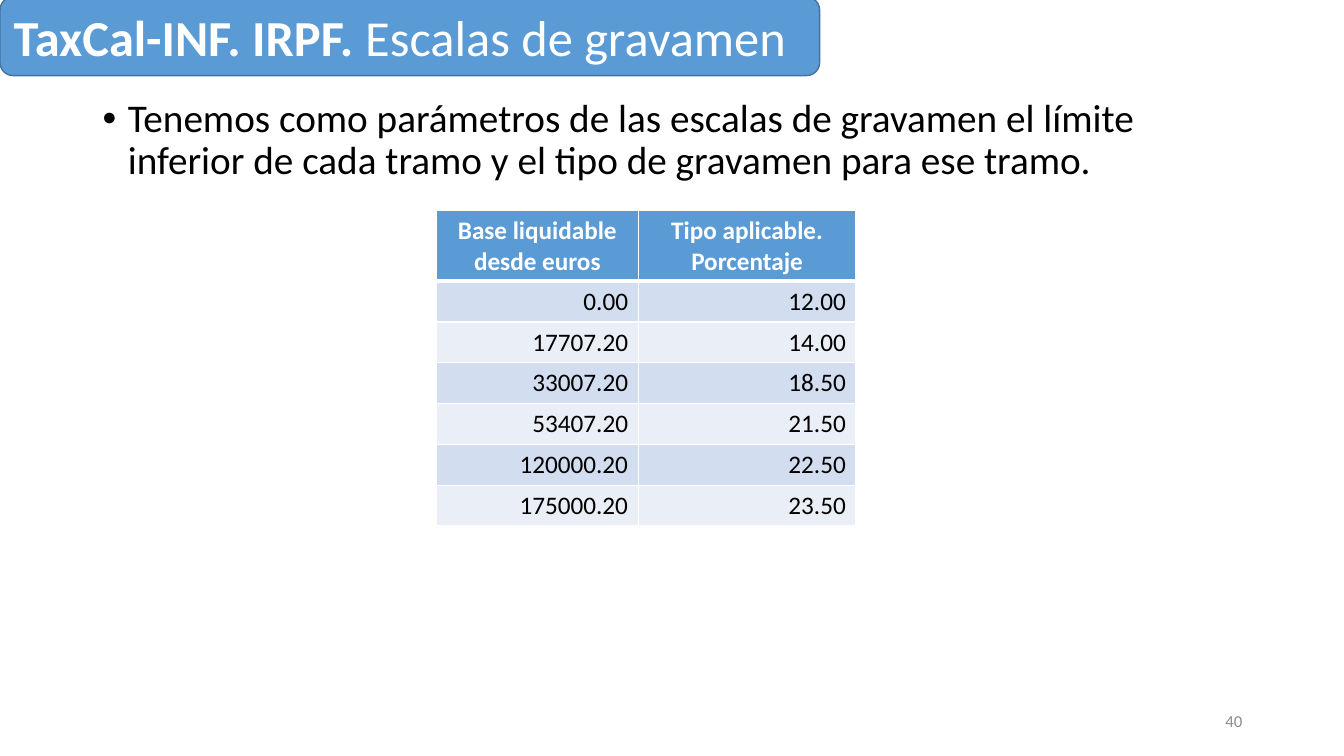
from lxml.etree import SubElement
from pptx import Presentation
from pptx.dml.color import RGBColor
from pptx.enum.shapes import MSO_SHAPE as SHAPE
from pptx.enum.text import MSO_ANCHOR as ANCHOR, PP_ALIGN as ALIGN
from pptx.oxml.ns import qn
from pptx.util import Inches, Pt

TITLE = [("TaxCal-INF. IRPF. ", True), ("Escalas de gravamen", False)]
BODY = ("Tenemos como parámetros de las escalas de gravamen el límite inferior "
        "de cada tramo y el tipo de gravamen para ese tramo.")
HEADER = ("Base liquidable desde euros", "Tipo aplicable. Porcentaje")
BRACKETS = [
    ("0.00", "12.00"),
    ("17707.20", "14.00"),
    ("33007.20", "18.50"),
    ("53407.20", "21.50"),
    ("120000.20", "22.50"),
    ("175000.20", "23.50"),
]
PAGE = "40"
COLORS = {"blue": "5B9BD5", "outline": "43739E", "odd": "D2DEEF", "even": "EAEFF7",
          "white": "FFFFFF", "black": "000000", "gray": "8C8C8C"}
FONT = "Calibri"
COL_WIDTHS = (2, 2.16)
HEADER_H, ROW_H = 0.7, 0.405


def rgb(name):
    return RGBColor.from_string(COLORS[name])


def add_run(p, text, size, color, bold=False):
    r = p.add_run()
    r.text = text
    r.font.name, r.font.size, r.font.bold = FONT, Pt(size), bold
    r.font.color.rgb = rgb(color)


def add_box(s, left, top, width, height):
    tf = s.shapes.add_textbox(*map(Inches, (left, top, width, height))).text_frame
    tf.word_wrap = True
    return tf


def add_bullet(p, indent):
    pPr = p._p.get_or_add_pPr()
    pPr.set("marL", str(Inches(indent)))
    pPr.set("indent", str(-Inches(indent)))
    SubElement(pPr, qn("a:buFont")).set("typeface", "Arial")
    SubElement(pPr, qn("a:buChar")).set("char", "•")


def set_borders(cell, bottom):
    tcPr = cell._tc.get_or_add_tcPr()
    widths = {"lnL": 1, "lnR": 1, "lnT": 1, "lnB": bottom}
    for i, (side, width) in enumerate(widths.items()):
        ln = tcPr.makeelement(qn(f"a:{side}"), {"w": str(Pt(width))})
        fill = SubElement(ln, qn("a:solidFill"))
        SubElement(fill, qn("a:srgbClr")).set("val", COLORS["white"])
        tcPr.insert(i, ln)


def add_brackets(s, left, top):
    rows = [HEADER, *BRACKETS]
    heights = [HEADER_H] + [ROW_H] * len(BRACKETS)
    table = s.shapes.add_table(len(rows), len(HEADER), Inches(left), Inches(top),
                               Inches(sum(COL_WIDTHS)), Inches(sum(heights))).table
    for col, width in zip(table.columns, COL_WIDTHS):
        col.width = Inches(width)
    for i, (values, height) in enumerate(zip(rows, heights)):
        table.rows[i].height = Inches(height)
        head = i == 0
        for j, value in enumerate(values):
            cell = table.cell(i, j)
            cell.fill.solid()
            cell.fill.fore_color.rgb = rgb("blue" if head else "odd" if i % 2 else "even")
            set_borders(cell, 3 if head else 1)
            p = cell.text_frame.paragraphs[0]
            p.alignment = ALIGN.CENTER if head else ALIGN.RIGHT
            add_run(p, value, 18, "white" if head else "black", head)


def add_title(s):
    sp = s.shapes.add_shape(SHAPE.ROUNDED_RECTANGLE, 0, Inches(-0.03), Inches(8.13), Inches(0.78))
    sp.shadow.inherit = False
    sp.fill.solid()
    sp.fill.fore_color.rgb = rgb("blue")
    sp.line.color.rgb = rgb("outline")
    sp.line.width = Pt(1)
    tf = sp.text_frame
    tf.word_wrap = True
    tf.vertical_anchor = ANCHOR.MIDDLE
    p = tf.paragraphs[0]
    p.alignment = ALIGN.LEFT
    for text, bold in TITLE:
        add_run(p, text, 36, "white", bold)


def main():
    """Build the tax scale slide."""
    prs = Presentation()
    prs.slide_width, prs.slide_height = Inches(13.33), Inches(7.5)
    s = prs.slides.add_slide(prs.slide_layouts[6])

    p = add_box(s, 0.92, 0.93, 11.5, 5.82).paragraphs[0]
    p.line_spacing = 0.9
    p.space_before = Pt(10)
    add_bullet(p, 0.25)
    add_run(p, BODY, 28, "black")

    tf = add_box(s, 9.42, 6.95, 3, 0.4)
    tf.vertical_anchor = ANCHOR.MIDDLE
    tf.paragraphs[0].alignment = ALIGN.RIGHT
    add_run(tf.paragraphs[0], PAGE, 12, "gray")

    add_brackets(s, 4.33, 2.09)
    add_title(s)
    prs.save("out.pptx")


if __name__ == "__main__":
    main()
